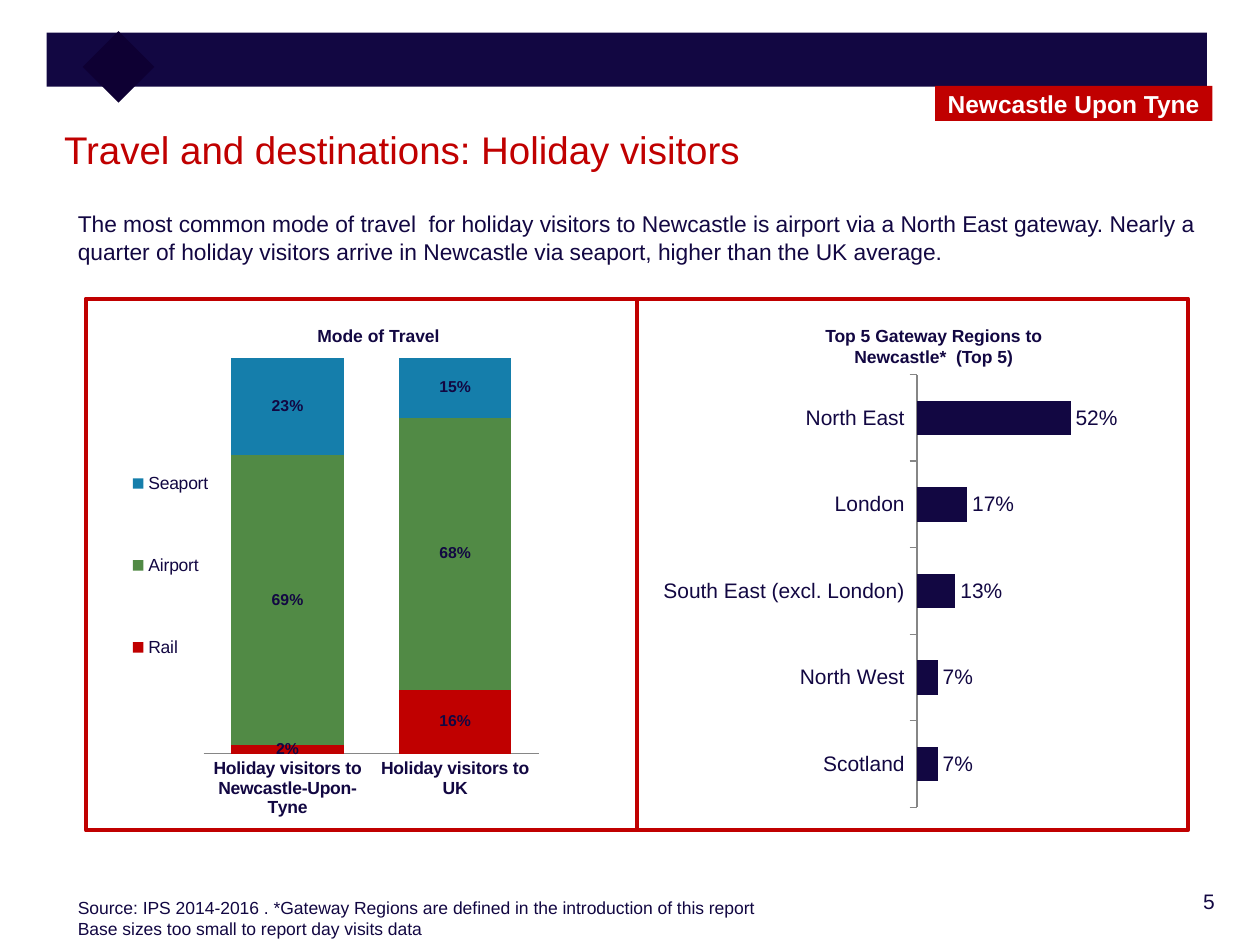
from lxml import etree
from pptx import Presentation
from pptx import util as u
from pptx.chart.data import CategoryChartData
from pptx.dml.color import RGBColor
from pptx.enum import chart as ch
from pptx.enum import shapes, text
from pptx.oxml.ns import qn

NAVY, DARK_NAVY, RED = "120742", "0E0033", "C00000"
GREEN, BLUE, GREY, WHITE = "518A45", "157EAB", "868686", "FFFFFF"
ALIGN = text.PP_ALIGN


def rgb(value):
    return RGBColor.from_string(value)


def box(left, top, width, height):
    return [u.Cm(length) for length in (left, top, width, height)]


def set_font(font, size, color=NAVY, bold=False):
    font.name, font.size, font.bold = "Arial", u.Pt(size), bold
    font.color.rgb = rgb(color)


def fill_frame(frame, lines, size, color=NAVY, bold=False, align=ALIGN.LEFT,
               anchor=text.MSO_ANCHOR.TOP):
    frame.word_wrap = True
    frame.vertical_anchor = anchor
    for index, line in enumerate(lines):
        paragraph = frame.paragraphs[0] if index == 0 else frame.add_paragraph()
        paragraph.text, paragraph.alignment = line, align
        set_font(paragraph.font, size, color, bold)


def add_text(slide, place, lines, size, **style):
    fill_frame(slide.shapes.add_textbox(*box(*place)).text_frame, lines, size, **style)


def add_rectangle(slide, place, fill=None, line=None):
    shape = slide.shapes.add_shape(shapes.MSO_SHAPE.RECTANGLE, *box(*place))
    shape.shadow.inherit = False
    if fill:
        shape.fill.solid()
        shape.fill.fore_color.rgb = rgb(fill)
    else:
        shape.fill.background()
    if line:
        shape.line.color.rgb = rgb(line)
        shape.line.width = u.Pt(2.25)
    else:
        shape.line.fill.background()
    return shape


def set_layout(parent, position, fractions, inner=False):
    """Place a plot area or legend by fractions (x, y, w, h) of the chart."""
    for old in parent.findall(qn("c:layout")):
        parent.remove(old)
    layout = etree.Element(qn("c:layout"))
    manual = etree.SubElement(layout, qn("c:manualLayout"))
    settings = [("layoutTarget", "inner")] if inner else []
    settings += [("xMode", "edge"), ("yMode", "edge"), *zip("xywh", fractions)]
    for tag, value in settings:
        etree.SubElement(manual, qn(f"c:{tag}")).set("val", str(value))
    parent.insert(position, layout)


def add_bar_chart(slide, place, kind, categories, series, gap, label_size,
                  maximum, plot_area, bold_labels=False):
    """Add a chart from (name, values, colour) series; the value axis is hidden."""
    data = CategoryChartData(number_format="0%")
    data.categories = categories
    for name, values, _ in series:
        data.add_series(name, values)
    chart = slide.shapes.add_chart(kind, *box(*place), data).chart
    chart.has_title = chart.has_legend = False
    set_font(chart.font, 10)

    plot = chart.plots[0]
    plot.gap_width, plot.vary_by_categories = gap, False
    for item, (_, _, color) in zip(plot.series, series):
        item.format.fill.solid()
        item.format.fill.fore_color.rgb = rgb(color)
        item.invert_if_negative = False
    plot.has_data_labels = True
    labels = plot.data_labels
    labels.show_value = True
    labels.number_format, labels.number_format_is_linked = "0%", False
    set_font(labels.font, label_size, bold=bold_labels)

    values_axis = chart.value_axis
    values_axis.visible = values_axis.has_major_gridlines = False
    values_axis.minimum_scale, values_axis.maximum_scale = 0, maximum
    chart.category_axis.format.line.color.rgb = rgb(GREY)
    chart.category_axis.has_major_gridlines = False
    plot_element = chart._chartSpace.find(f".//{qn('c:plotArea')}")
    set_layout(plot_element, 0, plot_area, inner=True)
    return chart


def add_travel_chart(slide):
    chart = add_bar_chart(
        slide, (2.24, 7.21, 8.89, 9.86), ch.XL_CHART_TYPE.COLUMN_STACKED_100,
        ["Holiday visitors to Newcastle-Upon-Tyne", "Holiday visitors to UK"],
        [("Rail", (0.02, 0.16), RED), ("Airport", (0.69, 0.68), GREEN),
         ("Seaport", (0.23, 0.15), BLUE)],
        gap=49, label_size=9, maximum=1, plot_area=(0.21, 0, 0.76, 0.81),
        bold_labels=True)
    chart.plots[0].overlap = 100
    chart.category_axis.major_tick_mark = ch.XL_TICK_MARK.NONE
    set_font(chart.category_axis.tick_labels.font, 10, bold=True)
    chart.has_legend = True
    legend = chart.legend
    legend.position = ch.XL_LEGEND_POSITION.LEFT
    legend.include_in_layout = False
    set_font(legend.font, 10)
    set_layout(legend._element, 1, (0.04, 0.11, 0.19, 0.63))


def add_gateway_chart(slide):
    chart = add_bar_chart(
        slide, (13.36, 7.37, 9.17, 9.09), ch.XL_CHART_TYPE.BAR_CLUSTERED,
        ["North East", "London", "South East (excl. London)", "North West", "Scotland"],
        [("Series 1", (0.52, 0.17, 0.13, 0.07, 0.07), NAVY)],
        gap=150, label_size=12, maximum=0.6, plot_area=(0.56, 0.02, 0.39, 0.96))
    chart.plots[0].data_labels.position = ch.XL_LABEL_POSITION.OUTSIDE_END
    axis = chart.category_axis
    axis.reverse_order = True
    axis.major_tick_mark = ch.XL_TICK_MARK.OUTSIDE
    set_font(axis.tick_labels.font, 12)


def add_header(slide):
    add_rectangle(slide, (0.94, 0.66, 23.39, 1.09), NAVY)
    add_rectangle(slide, (1.88, 0.84, 1.02, 1.02), DARK_NAVY).rotation = 45
    tag = add_rectangle(slide, (18.85, 1.73, 5.59, 0.71), RED)
    fill_frame(tag.text_frame, ["Newcastle Upon Tyne"], 14, WHITE, True,
               ALIGN.CENTER, text.MSO_ANCHOR.MIDDLE)
    title = slide.shapes.title
    title.left, title.top, title.width, title.height = box(1.04, 2.41, 23.39, 1.55)
    fill_frame(title.text_frame, ["Travel and destinations: Holiday visitors"], 22, RED)


def main():
    presentation = Presentation()
    presentation.slide_width, presentation.slide_height = u.Cm(25.4), u.Cm(19.05)
    slide = presentation.slides.add_slide(presentation.slide_layouts[5])

    add_header(slide)
    add_text(slide, (1.32, 4.11, 22.99, 1.88), [
        "The most common mode of travel  for holiday visitors to Newcastle is airport "
        "via a North East gateway. Nearly a quarter of holiday visitors arrive in "
        "Newcastle via seaport, higher than the UK average."], 13, align=ALIGN.JUSTIFY)

    panel_width = 11.11
    for column in range(2):
        add_rectangle(slide, (1.73 + column * panel_width, 6.02, panel_width, 10.72),
                      line=RED)
    add_text(slide, (6.15, 6.43, 3.73, 0.79), ["Mode of Travel"], 10, bold=True)
    add_travel_chart(slide)
    add_text(slide, (16.13, 6.43, 5.38, 1.17),
             ["Top 5 Gateway Regions to Newcastle*  (Top 5)"], 10, bold=True,
             align=ALIGN.CENTER)
    add_gateway_chart(slide)

    add_text(slide, (1.32, 17.96, 23.06, 1.12), [
        "Source: IPS 2014-2016 . *Gateway Regions are defined in the introduction "
        "of this report",
        "Base sizes too small to report day visits data"], 10)
    add_text(slide, (21.67, 17.78, 3.07, 0.91), ["5"], 12, align=ALIGN.RIGHT)
    presentation.save("out.pptx")


if __name__ == "__main__":
    main()
